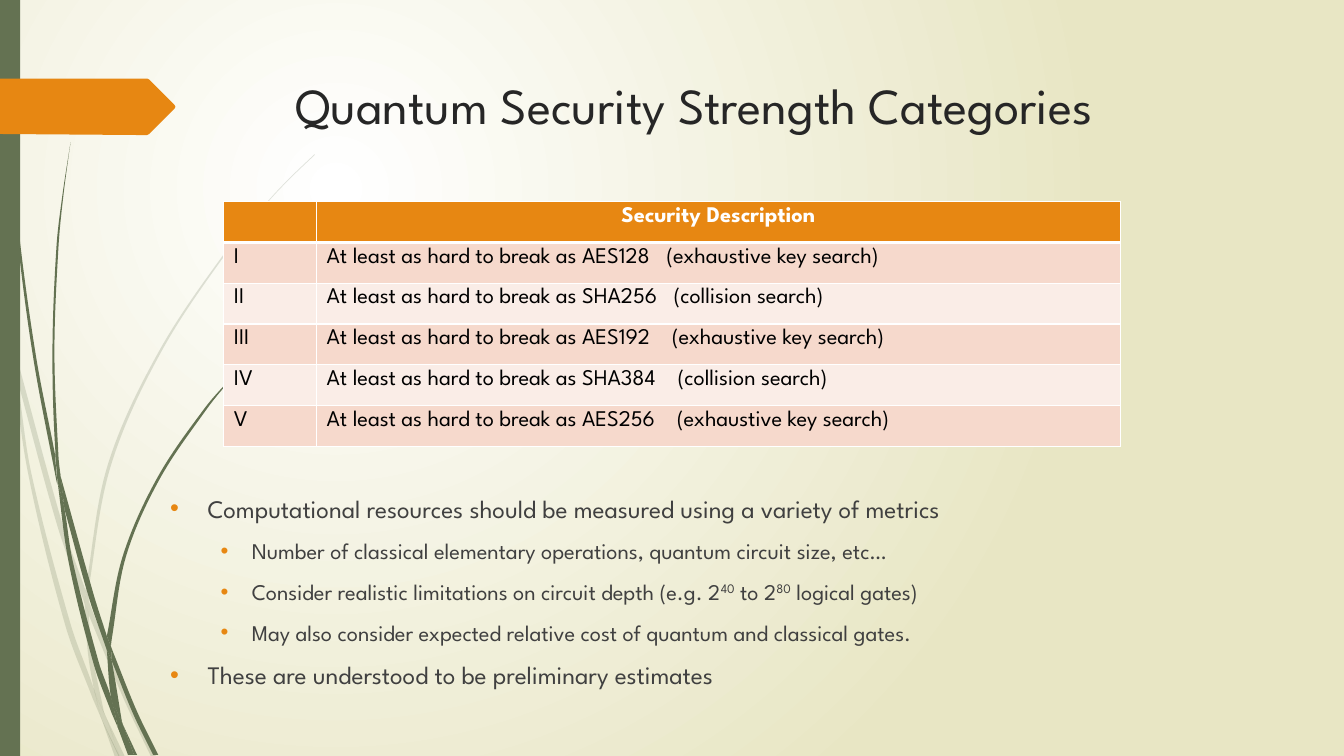
from dataclasses import dataclass

from lxml.etree import SubElement
from pptx import Presentation
from pptx.dml.color import RGBColor
from pptx.enum.shapes import MSO_SHAPE
from pptx.enum.text import PP_ALIGN
from pptx.oxml.ns import qn
from pptx.util import Inches, Pt

FONT = "League Spartan"
WHITE = RGBColor(0xFF, 0xFF, 0xFF)
BLACK = RGBColor(0x00, 0x00, 0x00)
CREAM = RGBColor(0xE8, 0xE6, 0xC4)
GREEN = RGBColor(0x64, 0x72, 0x52)
ORANGE = RGBColor(0xE7, 0x87, 0x12)
TITLE_GREY = RGBColor(0x26, 0x26, 0x26)
BODY_GREY = RGBColor(0x40, 0x40, 0x40)
ROW_COLORS = (RGBColor(0xF6, 0xD9, 0xCC), RGBColor(0xFA, 0xED, 0xE7))
Points = list[tuple[float, float]]


@dataclass
class Blade:
    """A piece of grass: one edge out to its tip, the other edge back."""
    out: Points
    back: Points


@dataclass
class Bullet:
    text: str  # "^" separates normal and superscript stretches
    level: int = 0


PALE_GRASS = [
    Blade([(0.11, 3.5), (0.09, 3.22), (0, 2.82)], [(0, 2.99), (0.1, 3.44), (0.11, 3.5)]),
    Blade([(0.14, 3.45), (0.62, 5.2), (0.85, 5.86)], [(0.84, 5.99), (0.57, 5.22), (0.17, 3.76)]),
    Blade([(0.88, 5.96), (0.92, 6.07), (1.27, 6.92), (1.55, 7.51)], [(1.5, 7.51), (1.23, 6.94), (0.88, 6.1)]),
    Blade([(1.05, 7.11), (1.24, 7.51)], [(1.19, 7.51), (1.05, 7.11)]),
    Blade([(0.11, 3.5), (0.17, 3.76), (0.31, 4.69), (0.7, 6.19), (0.93, 6.83), (0.99, 7.07), (1.01, 7.14)],
          [(0.92, 6.93), (0.65, 6.21), (0.28, 4.7), (0.11, 3.5)]),
    Blade([(0.84, 5.99), (0.87, 6.46), (0.93, 6.83), (0.96, 6.92), (1.05, 7.11)],
          [(1.03, 7.06), (0.91, 6.46), (0.88, 6.1), (0.88, 6.08)]),
    Blade([(0.88, 5.96), (0.88, 5.84), (1.1, 4.62), (1.6, 3.49), (2.29, 2.45), (2.68, 1.98), (2.9, 1.75), (3.12, 1.54)],
          [(3.12, 1.53), (2.89, 1.75), (2.68, 1.97), (2.28, 2.44), (1.58, 3.48), (1.07, 4.61), (0.85, 5.84),
           (0.85, 5.86)]),
    Blade([(1.01, 7.14), (1.14, 7.51)], [(1.19, 7.51), (1.01, 7.14)]),
    Blade([(0.88, 6.08), (0.88, 6.1), (0.88, 5.96)], [(0.85, 5.86), (0.84, 5.99)]),
    Blade([(0.93, 6.83), (0.99, 7.07), (1.01, 7.14), (1.18, 7.51)],
          [(1.19, 7.51), (1.05, 7.11), (0.96, 6.92), (0.93, 6.83)]),
]
DARK_GRASS = [
    Blade([(0.03, 0), (0.04, 0.48), (0.07, 1.1), (0.17, 2.33), (0.33, 3.55), (0.56, 4.77), (0.57, 4.81)],
          [(0.55, 4.57), (0.55, 4.53), (0.36, 3.55), (0.19, 2.32), (0.08, 1.09), (0.05, 0.48), (0.04, 0)]),
    Blade([(0.6, 4.72), (0.93, 5.9), (1.06, 6.31)], [(1.06, 6.45), (0.88, 5.92), (0.64, 5.05)]),
    Blade([(1.1, 6.41), (1.13, 6.49), (1.36, 7.06), (1.57, 7.49)], [(1.52, 7.49), (1.32, 7.08), (1.11, 6.56)]),
    Blade([(0.57, 4.77), (0.64, 5.05), (0.72, 5.56), (0.98, 6.57), (1.1, 6.91), (1.16, 7.17), (1.17, 7.22)],
          [(1.11, 7.08), (0.93, 6.59), (0.68, 5.57), (0.57, 4.77)]),
    Blade([(0.6, 4.72), (0.58, 4.53), (0.54, 3.49), (0.58, 2.45), (0.63, 1.93), (0.7, 1.41)],
          [(0.7, 1.41), (0.62, 1.93), (0.56, 2.45), (0.52, 3.49), (0.55, 4.49), (0.6, 4.72)]),
    Blade([(1.22, 7.19), (1.36, 7.49)], [(1.33, 7.49), (1.22, 7.19)]),
    Blade([(0.55, 4.49), (0.6, 4.72), (0.64, 5.05)], [(0.57, 4.77), (0.55, 4.53)]),
    Blade([(1.1, 6.41), (1.11, 6.33), (1.25, 5.52), (1.58, 4.76), (2.05, 4.06), (2.31, 3.74), (2.45, 3.59), (2.61, 3.44)],
          [(2.6, 3.44), (2.45, 3.58), (2.31, 3.73), (2.03, 4.05), (1.56, 4.74), (1.22, 5.51), (1.06, 6.31)]),
    Blade([(1.17, 7.22), (1.27, 7.49)], [(1.31, 7.49), (1.17, 7.22)]),
    Blade([(1.06, 6.45), (1.1, 6.91), (1.16, 7.06), (1.22, 7.19)], [(1.21, 7.16), (1.11, 6.56), (1.09, 6.51)]),
    Blade([(1.06, 6.45), (1.09, 6.51), (1.11, 6.56)], [(1.1, 6.41), (1.06, 6.31)]),
    Blade([(1.1, 6.91), (1.16, 7.17), (1.17, 7.22), (1.3, 7.49)], [(1.33, 7.49), (1.22, 7.19), (1.16, 7.06)]),
]
TITLE_ARROW = [(0, 0.78), (1.46, 0.78), (1.48, 0.79), (1.73, 1.04), (1.74, 1.06),
               (1.73, 1.08), (1.48, 1.33), (1.46, 1.34), (1.36, 1.34), (0, 1.33)]
CATEGORIES = [
    ("I", "At least as hard to break as AES128   (exhaustive key search)"),
    ("II", "At least as hard to break as SHA256   (collision search)"),
    ("III", "At least as hard to break as AES192    (exhaustive key search)"),
    ("IV", "At least as hard to break as SHA384    (collision search)"),
    ("V", "At least as hard to break as AES256    (exhaustive key search)"),
]
BULLETS = [
    Bullet("Computational resources should be measured using a variety of metrics"),
    Bullet("Number of classical elementary operations, quantum circuit size, etc…", 1),
    Bullet("Consider realistic limitations on circuit depth (e.g. 2^40^ to 2^80^ logical gates)", 1),
    Bullet("May also consider expected relative cost of quantum and classical gates.", 1),
    Bullet("These are understood to be preliminary estimates"),
]


def paint(shape, color: RGBColor) -> None:
    shape.shadow.inherit = False
    shape.fill.solid()
    shape.fill.fore_color.rgb = color
    shape.line.fill.background()


def add_outline(shapes, points: Points, color: RGBColor):
    corners = [(Inches(x), Inches(y)) for x, y in points]
    builder = shapes.build_freeform(*corners[0])
    builder.add_line_segments(corners[1:], close=True)
    shape = builder.convert_to_shape()
    paint(shape, color)
    return shape


def bend_edge(segments: list) -> None:
    """Turn the straight segments after the first point into one smooth Bézier edge."""
    spots = [complex(int(point.get("x")), int(point.get("y"))) for point in (segment[0] for segment in segments)]
    padded = [spots[0], *spots, spots[-1]]
    for segment, a, b, c, d in zip(segments[1:], padded, padded[1:], padded[2:], padded[3:]):
        reach = abs(c - b) / 3
        controls = (b + reach * (c - a) / abs(c - a), c - reach * (d - b) / abs(d - b))
        segment.tag = qn("a:cubicBezTo")
        for control in reversed(controls):
            point = SubElement(segment, qn("a:pt"), x=str(round(control.real)), y=str(round(control.imag)))
            segment.insert(0, point)


def add_grass(slide, blades: list[Blade], opacity: int = 100) -> None:
    group = slide.shapes.add_group_shape()
    for blade in blades:
        shape = add_outline(group.shapes, blade.out + blade.back, GREEN)
        segments = list(shape._element.find(".//" + qn("a:path")))[:-1]
        bend_edge(segments[:len(blade.out)])
        bend_edge(segments[len(blade.out):len(blade.out) + len(blade.back)])
        if opacity < 100:
            color = shape._element.spPr.find(".//" + qn("a:srgbClr"))
            SubElement(color, qn("a:alpha"), val=str(opacity * 1000))


def set_background(slide) -> None:
    fill = slide.background.fill
    fill.gradient()
    for stop, position, color in zip(fill.gradient_stops, (0, 1), (WHITE, CREAM)):
        stop.position = position
        stop.color.rgb = color
    gradient = slide._element.find(".//" + qn("a:gradFill"))
    gradient.remove(gradient.find(qn("a:lin")))
    circle = SubElement(gradient, qn("a:path"), path="circle")
    SubElement(circle, qn("a:fillToRect"), l="50000", t="50000", r="100000", b="100000")


def add_text_frame(slide, left: float, top: float, width: float, height: float):
    box = slide.shapes.add_textbox(Inches(left), Inches(top), Inches(width), Inches(height))
    box.text_frame.word_wrap = True
    return box.text_frame


def set_font(paragraph, size: int, color: RGBColor, bold: bool = False) -> None:
    font = paragraph.font
    font.name, font.size, font.bold = FONT, Pt(size), bold
    font.color.rgb = color


def add_bullet(paragraph, bullet: Bullet) -> None:
    for index, text in enumerate(bullet.text.split("^")):
        run = paragraph.add_run()
        run.text = text
        if index % 2:
            run.font._element.set("baseline", "30000")
    paragraph.level = bullet.level
    paragraph.space_before = Pt(10)
    set_font(paragraph, (18, 16)[bullet.level], BODY_GREY)
    margin, hanging = ((0.37, 0.37), (0.81, 0.31))[bullet.level]
    properties = paragraph._p.get_or_add_pPr()
    properties.set("marL", str(Inches(margin)))
    properties.set("indent", str(-Inches(hanging)))
    bullet_color = SubElement(properties, qn("a:buClr"))
    SubElement(bullet_color, qn("a:srgbClr"), val=str(ORANGE))
    SubElement(properties, qn("a:buFont"), typeface="Arial")
    SubElement(properties, qn("a:buChar"), char="•")
    properties.append(properties.find(qn("a:defRPr")))


def style_cell(cell, fill: RGBColor, top: int, bottom: int) -> None:
    properties = cell._tc.get_or_add_tcPr()
    for side, width in (("L", 1), ("R", 1), ("T", top), ("B", bottom)):
        border = SubElement(properties, qn("a:ln" + side), w=str(Pt(width)))
        SubElement(SubElement(border, qn("a:solidFill")), qn("a:srgbClr"), val=str(WHITE))
    cell.fill.solid()
    cell.fill.fore_color.rgb = fill


def add_category_table(slide) -> None:
    rows = [("", "Security Description"), *CATEGORIES]
    table = slide.shapes.add_table(len(rows), 2, Inches(2.22), Inches(2), Inches(8.89), Inches(2.43)).table
    for column, width in zip(table.columns, (0.92, 7.97)):
        column.width = Inches(width)
    for i, row in enumerate(rows):
        header = i == 0
        for cell, text in zip(table.rows[i].cells, row):
            style_cell(cell, ORANGE if header else ROW_COLORS[(i - 1) % 2], 3 if i == 1 else 1, 3 if header else 1)
            paragraph = cell.text_frame.paragraphs[0]
            paragraph.text = text
            set_font(paragraph, 16, WHITE if header else BLACK, header)
            paragraph.alignment = PP_ALIGN.CENTER if header else PP_ALIGN.LEFT


def main() -> None:
    presentation = Presentation()
    presentation.slide_width, presentation.slide_height = Inches(13.33), Inches(7.5)
    slide = presentation.slides.add_slide(presentation.slide_layouts[6])
    set_background(slide)
    add_grass(slide, PALE_GRASS, opacity=20)
    add_grass(slide, DARK_GRASS)
    paint(slide.shapes.add_shape(MSO_SHAPE.RECTANGLE, 0, 0, Inches(0.2), Inches(7.5)), GREEN)
    add_outline(slide.shapes, TITLE_ARROW, ORANGE)
    title = add_text_frame(slide, 2.83, 0.69, 9.74, 1.4).paragraphs[0]
    title.text = "Quantum Security Strength Categories"
    set_font(title, 36, TITLE_GREY)
    body = add_text_frame(slide, 1.59, 4.84, 10.67, 2.07)
    for index, bullet in enumerate(BULLETS):
        add_bullet(body.add_paragraph() if index else body.paragraphs[0], bullet)
    add_category_table(slide)
    presentation.save("out.pptx")


if __name__ == "__main__":
    main()
